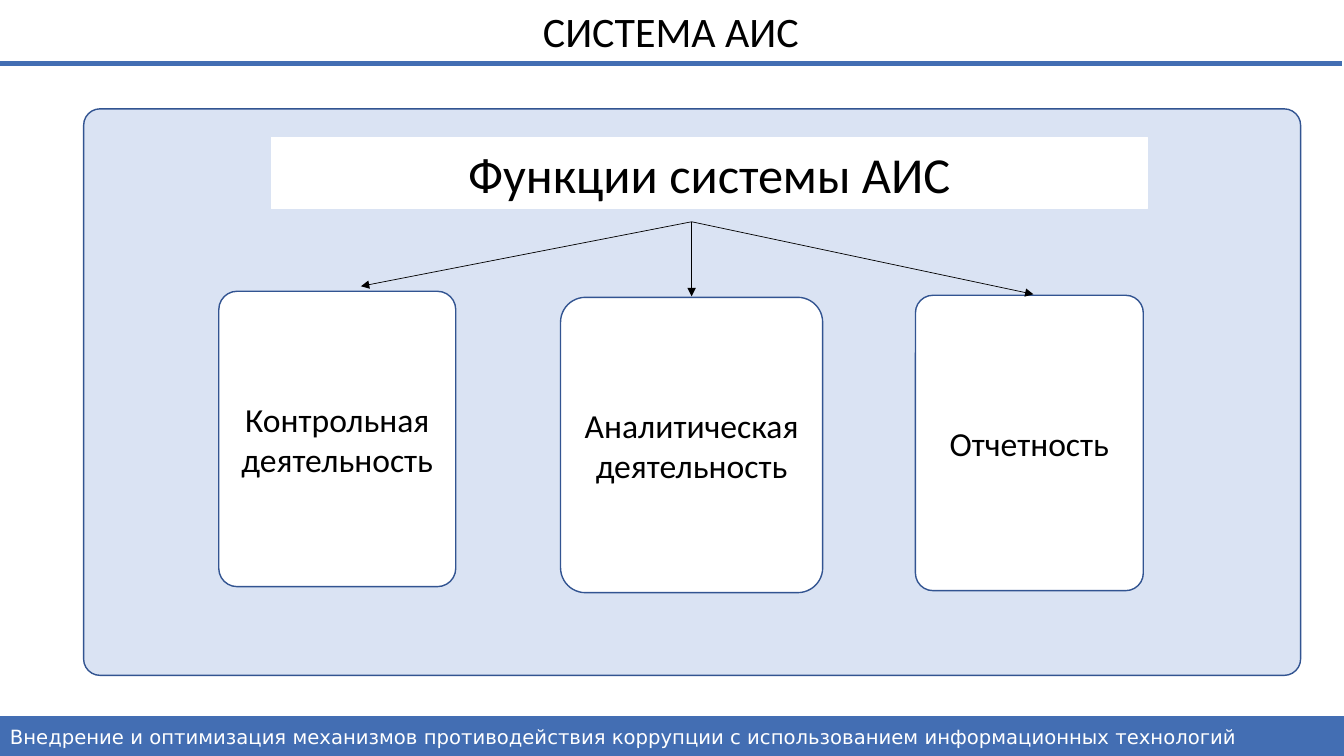
import pptx
import pptx.dml.color
import pptx.enum.shapes
import pptx.enum.text
import pptx.oxml
import pptx.util
from pptx.util import Inches

RGBColor = pptx.dml.color.RGBColor
Kind = pptx.enum.shapes.MSO_SHAPE
Align = pptx.enum.text.PP_ALIGN
Anchor = pptx.enum.text.MSO_ANCHOR

BLACK = RGBColor(0x00, 0x00, 0x00)
WHITE = RGBColor(0xFF, 0xFF, 0xFF)
BLUE = RGBColor(0x43, 0x6E, 0xB3)
OUTLINE = RGBColor(0x32, 0x54, 0x91)
PALE = RGBColor(0xDA, 0xE3, 0xF3)


def write(shape, text, size=24, font="Calibri", color=BLACK,
          align=Align.CENTER, anchor=Anchor.MIDDLE, after=0):
    frame = shape.text_frame
    frame.word_wrap = True
    frame.auto_size = pptx.enum.text.MSO_AUTO_SIZE.NONE
    frame.vertical_anchor = anchor
    paragraph = frame.paragraphs[0]
    paragraph.alignment = align
    paragraph.space_after = pptx.util.Pt(after)
    run = paragraph.add_run()
    run.text = text
    run.font.size = pptx.util.Pt(size)
    run.font.name = font
    run.font.color.rgb = color


class Page:
    def __init__(self, deck):
        self.slide = deck.slides.add_slide(deck.slide_layouts[5])

    def title(self, text, left, top, width, height):
        heading = self.slide.shapes.title
        heading.left, heading.top = Inches(left), Inches(top)
        heading.width, heading.height = Inches(width), Inches(height)
        write(heading, text, size=30, anchor=Anchor.TOP)

    def box(self, left, top, width, height, fill=WHITE, line=OUTLINE,
            weight=1, corner=None):
        kind = Kind.RECTANGLE if corner is None else Kind.ROUNDED_RECTANGLE
        shape = self.slide.shapes.add_shape(
            kind, Inches(left), Inches(top), Inches(width), Inches(height))
        if corner is not None:
            shape.adjustments[0] = corner
        shape.shadow.inherit = False
        shape.fill.solid()
        shape.fill.fore_color.rgb = fill
        shape.line.color.rgb = line
        shape.line.width = pptx.util.Pt(weight)
        return shape

    def line(self, start, end, color=BLACK, weight=0.5, arrow=False):
        connector = self.slide.shapes.add_connector(
            pptx.enum.shapes.MSO_CONNECTOR.STRAIGHT,
            Inches(start[0]), Inches(start[1]), Inches(end[0]), Inches(end[1]))
        connector.line.color.rgb = color
        connector.line.width = pptx.util.Pt(weight)
        properties = connector._element.spPr
        if arrow:
            head = pptx.oxml.xmlchemy.OxmlElement("a:tailEnd")
            head.set("type", "triangle")
            properties.find(pptx.oxml.ns.qn("a:ln")).append(head)
        properties.append(pptx.oxml.xmlchemy.OxmlElement("a:effectLst"))


def main():
    deck = pptx.Presentation()
    deck.slide_width, deck.slide_height = Inches(13.33), Inches(7.5)
    page = Page(deck)

    page.title("СИСТЕМА АИС", 0, 0, 13.31, 0.61)
    page.line((0, 0.63), (13.31, 0.63), color=BLUE, weight=3)

    page.box(0.83, 1.08, 12.07, 5.62, fill=PALE, corner=0.029)
    functions = page.box(2.69, 1.36, 8.69, 0.71, line=WHITE, weight=0.75)
    write(functions, "Функции системы АИС", size=36)

    branches = [
        ("Контрольная деятельность", 2.17, 2.89, 2.35, 0.077, (3.58, 2.84)),
        ("Аналитическая деятельность", 5.56, 2.95, 2.6, 0.095, (6.86, 2.94)),
        ("Отчетность", 9.08, 2.93, 2.26, 0.077, (10.25, 2.92)),
    ]
    for text, left, top, width, corner, arrow_tip in branches:
        write(page.box(left, top, width, 2.93, corner=corner), text)
        page.line((6.86, 2.2), arrow_tip, arrow=True)

    footer = page.box(0, 7.11, 13.33, 0.39, fill=BLUE, line=BLUE)
    write(footer, "Внедрение и оптимизация механизмов противодействия коррупции "
          "с использованием информационных технологий", size=14,
          font="DejaVu Sans", color=WHITE, align=Align.LEFT, after=4)

    deck.save("out.pptx")


if __name__ == "__main__":
    main()
